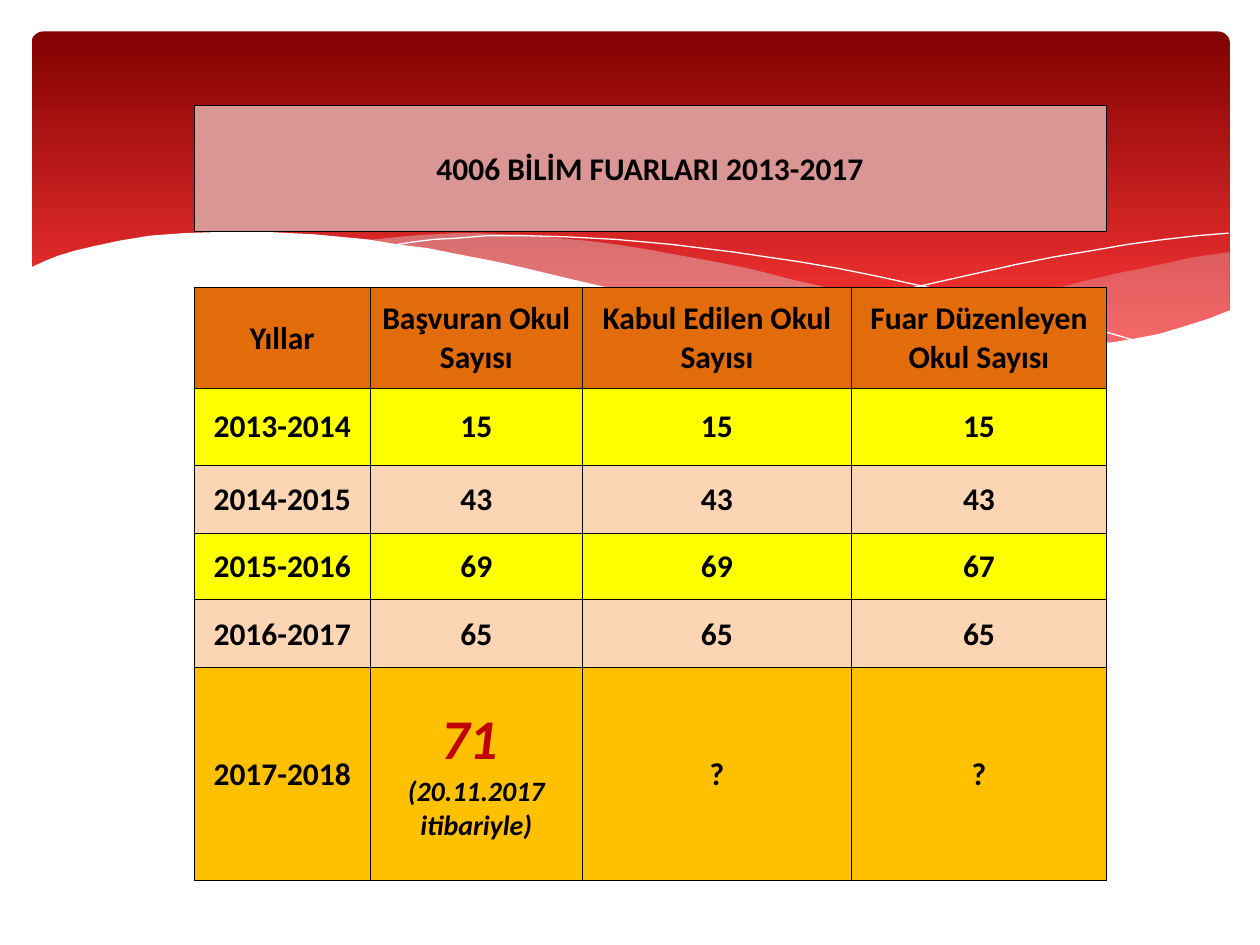
from lxml.etree import SubElement
from pptx import Presentation
from pptx.dml.color import RGBColor
from pptx.enum.shapes import MSO_SHAPE
from pptx.enum.text import MSO_ANCHOR, PP_ALIGN
from pptx.oxml.ns import qn
from pptx.util import Inches, Pt

BLACK = RGBColor(0x00, 0x00, 0x00)
WHITE = RGBColor(0xFF, 0xFF, 0xFF)
DARK_RED = RGBColor(0x82, 0x01, 0x01)
BRIGHT_RED = RGBColor(0xFE, 0x37, 0x37)
MIST = RGBColor(0xDE, 0xDE, 0xE0)
ROSE = RGBColor(0xDA, 0x96, 0x94)
ORANGE = RGBColor(0xE2, 0x6B, 0x0A)
YELLOW = RGBColor(0xFF, 0xFF, 0x00)
PEACH = RGBColor(0xFC, 0xD5, 0xB4)
AMBER = RGBColor(0xFF, 0xC0, 0x00)
ACCENT_RED = RGBColor(0xC0, 0x00, 0x00)

# Wave outlines, in inches
RIGHT_WAVE = [
    (9.76, 2), (9.48, 2.04), (9.21, 2.1), (8.91, 2.16), (8.61, 2.23),
    (8.05, 2.37), (7.53, 2.48), (7.06, 2.57), (6.61, 2.65), (6.91, 2.69),
    (7.19, 2.72), (7.45, 2.75), (7.69, 2.77), (8.03, 2.78), (8.35, 2.77),
    (8.63, 2.75), (8.89, 2.72), (9.13, 2.67), (9.35, 2.62), (9.49, 2.57),
    (9.63, 2.52), (9.76, 2.47)]
MIDDLE_WAVE = [
    (8.93, 2.73), (8.66, 2.69), (8.37, 2.65), (8.07, 2.6), (7.75, 2.54),
    (7.41, 2.47), (7.06, 2.4), (6.68, 2.31), (6.29, 2.22), (5.98, 2.14),
    (5.69, 2.08), (5.41, 2.03), (5.14, 1.98), (4.89, 1.94), (4.65, 1.91),
    (4.42, 1.89), (4.2, 1.87), (3.99, 1.86), (3.8, 1.85), (3.61, 1.85),
    (3.28, 1.87), (2.86, 1.91), (3.23, 1.96), (3.62, 2.03), (4.04, 2.11),
    (4.49, 2.22), (4.91, 2.32), (5.3, 2.4), (5.66, 2.48), (6.01, 2.55),
    (6.34, 2.61), (6.65, 2.66), (6.95, 2.7), (7.22, 2.74), (7.48, 2.76),
    (7.85, 2.78), (8.28, 2.78), (8.57, 2.77), (8.76, 2.75)]
LONG_LINE = [
    (3.09, 1.95), (3.28, 1.92), (3.44, 1.9), (3.63, 1.89), (3.87, 1.87),
    (4.16, 1.87), (4.5, 1.88), (4.89, 1.9), (5.33, 1.94), (5.82, 2),
    (6.36, 2.08), (6.65, 2.13), (6.95, 2.19), (7.27, 2.26), (7.6, 2.33),
    (7.95, 2.41), (8.31, 2.51), (8.69, 2.61), (9.07, 2.72)]
SHORT_LINE = [
    (6.13, 2.57), (6.53, 2.46), (6.95, 2.35), (7.48, 2.23), (8.06, 2.1),
    (8.36, 2.04), (8.66, 1.99), (8.95, 1.94), (9.24, 1.9), (9.51, 1.87),
    (9.75, 1.85)]
WHITE_WAVE = [
    (9.77, 2.46), (9.59, 2.53), (9.4, 2.59), (9.2, 2.65), (8.99, 2.69),
    (8.75, 2.73), (8.5, 2.75), (8.23, 2.77), (7.93, 2.76), (7.61, 2.75),
    (7.26, 2.72), (6.88, 2.68), (6.48, 2.62), (6.03, 2.54), (5.55, 2.45),
    (5.03, 2.33), (4.47, 2.2), (4.18, 2.13), (3.91, 2.07), (3.65, 2.02),
    (3.4, 1.97), (3.16, 1.94), (2.92, 1.9), (2.71, 1.88), (2.5, 1.86),
    (2.3, 1.85), (2.11, 1.84), (1.77, 1.84), (1.46, 1.85), (1.19, 1.87),
    (0.95, 1.91), (0.76, 1.95), (0.59, 1.99), (0.46, 2.03), (0.36, 2.07),
    (0.23, 2.13), (0.23, 3.29), (9.77, 3.29)]

COLUMN_WIDTHS = [1.4, 1.68, 2.14, 2.02]
ROW_HEIGHTS = [1, 0.44, 0.8, 0.61, 0.54, 0.53, 0.54, 1.69]
GAP_ROW = 1
TITLE = "4006 BİLİM FUARLARI 2013-2017"
# Fill and texts of each row below the gap
TABLE_ROWS = [
    (ORANGE, ["Yıllar", "Başvuran Okul Sayısı", "Kabul Edilen Okul Sayısı",
              "Fuar Düzenleyen Okul Sayısı"]),
    (YELLOW, ["2013-2014", "15", "15", "15"]),
    (PEACH, ["2014-2015", "43", "43", "43"]),
    (YELLOW, ["2015-2016", "69", "69", "67"]),
    (PEACH, ["2016-2017", "65", "65", "65"]),
    (AMBER, ["2017-2018", "71 \n(20.11.2017 itibariyle)", "?", "?"]),
]


def add_banner(slide):
    banner = slide.shapes.add_shape(
        MSO_SHAPE.ROUNDED_RECTANGLE,
        Inches(0.25), Inches(0.25), Inches(9.51), Inches(2.7))
    banner.adjustments[0] = 0.034
    banner.shadow.inherit = False
    banner.line.fill.background()
    banner.fill.gradient()
    banner.fill.gradient_angle = 270
    stops = banner.fill.gradient_stops
    for stop, color, position in zip(stops, (DARK_RED, BRIGHT_RED), (0, 0.9)):
        stop.color.rgb = color
        stop.position = position


def add_outline(slide, points, closed):
    vertices = [(Inches(x), Inches(y)) for x, y in points]
    builder = slide.shapes.build_freeform(*vertices[0])
    builder.add_line_segments(vertices[1:], close=closed)
    shape = builder.convert_to_shape()
    shape.shadow.inherit = False
    return shape


def add_wave(slide, points, color, opacity=100):
    wave = add_outline(slide, points, closed=True)
    wave.line.fill.background()
    wave.fill.solid()
    wave.fill.fore_color.rgb = color
    if opacity < 100:
        color_element = wave._element.spPr.find(".//" + qn("a:srgbClr"))
        SubElement(color_element, qn("a:alpha"), val=str(opacity * 1000))


def add_curve(slide, points):
    curve = add_outline(slide, points, closed=False)
    curve.fill.background()
    curve.line.color.rgb = WHITE
    curve.line.width = Pt(0)


def set_borders(cell, visible_sides):
    properties = cell._tc.get_or_add_tcPr()
    for side in "LRTB":
        line = SubElement(properties, qn(f"a:ln{side}"), w=str(Pt(0.5)))
        if side in visible_sides:
            fill = SubElement(line, qn("a:solidFill"))
            SubElement(fill, qn("a:srgbClr"), val=str(BLACK))
        else:
            SubElement(line, qn("a:noFill"))


def fill_cell(cell, text, color):
    cell.fill.solid()
    cell.fill.fore_color.rgb = color
    cell.vertical_anchor = MSO_ANCHOR.MIDDLE
    cell.margin_left = cell.margin_top = cell.margin_right = Inches(0.01)
    cell.margin_bottom = 0
    cell.text_frame.text = text
    for paragraph in cell.text_frame.paragraphs:
        paragraph.alignment = PP_ALIGN.CENTER
        paragraph.font.name = "Calibri"
        paragraph.font.size = Pt(18)
        paragraph.font.bold = True
        paragraph.font.color.rgb = BLACK


def add_fair_table(slide):
    table = slide.shapes.add_table(
        len(ROW_HEIGHTS), len(COLUMN_WIDTHS), Inches(1.54), Inches(0.84),
        Inches(sum(COLUMN_WIDTHS)), Inches(sum(ROW_HEIGHTS))).table
    table.first_row = table.horz_banding = False
    for column, width in zip(table.columns, COLUMN_WIDTHS):
        column.width = Inches(width)
    for index, (row, height) in enumerate(zip(table.rows, ROW_HEIGHTS)):
        row.height = Inches(height)
        for cell in row.cells:
            set_borders(cell, "TB" if index == GAP_ROW else "LRTB")
            cell.fill.background()

    # Title row across all columns
    table.cell(0, 0).merge(table.cell(0, len(COLUMN_WIDTHS) - 1))
    fill_cell(table.cell(0, 0), TITLE, ROSE)

    # Header and yearly figures
    for row_index, (color, texts) in enumerate(TABLE_ROWS, GAP_ROW + 1):
        for column_index, text in enumerate(texts):
            fill_cell(table.cell(row_index, column_index), text, color)

    # Highlighted count of the current year and its date
    count, date = table.cell(len(ROW_HEIGHTS) - 1, 1).text_frame.paragraphs
    count.font.size = Pt(32)
    count.font.color.rgb = ACCENT_RED
    date.font.size = Pt(16)
    count.font.italic = date.font.italic = True


def main():
    presentation = Presentation()
    presentation.slide_width = Inches(10)
    presentation.slide_height = Inches(7.5)
    slide = presentation.slides.add_slide(presentation.slide_layouts[6])

    # Background banner with waves
    add_banner(slide)
    add_wave(slide, RIGHT_WAVE, MIST, opacity=29)
    add_wave(slide, MIDDLE_WAVE, MIST, opacity=40)
    add_curve(slide, LONG_LINE)
    add_curve(slide, SHORT_LINE)
    add_wave(slide, WHITE_WAVE, WHITE)

    add_fair_table(slide)
    presentation.save("out.pptx")


if __name__ == "__main__":
    main()
